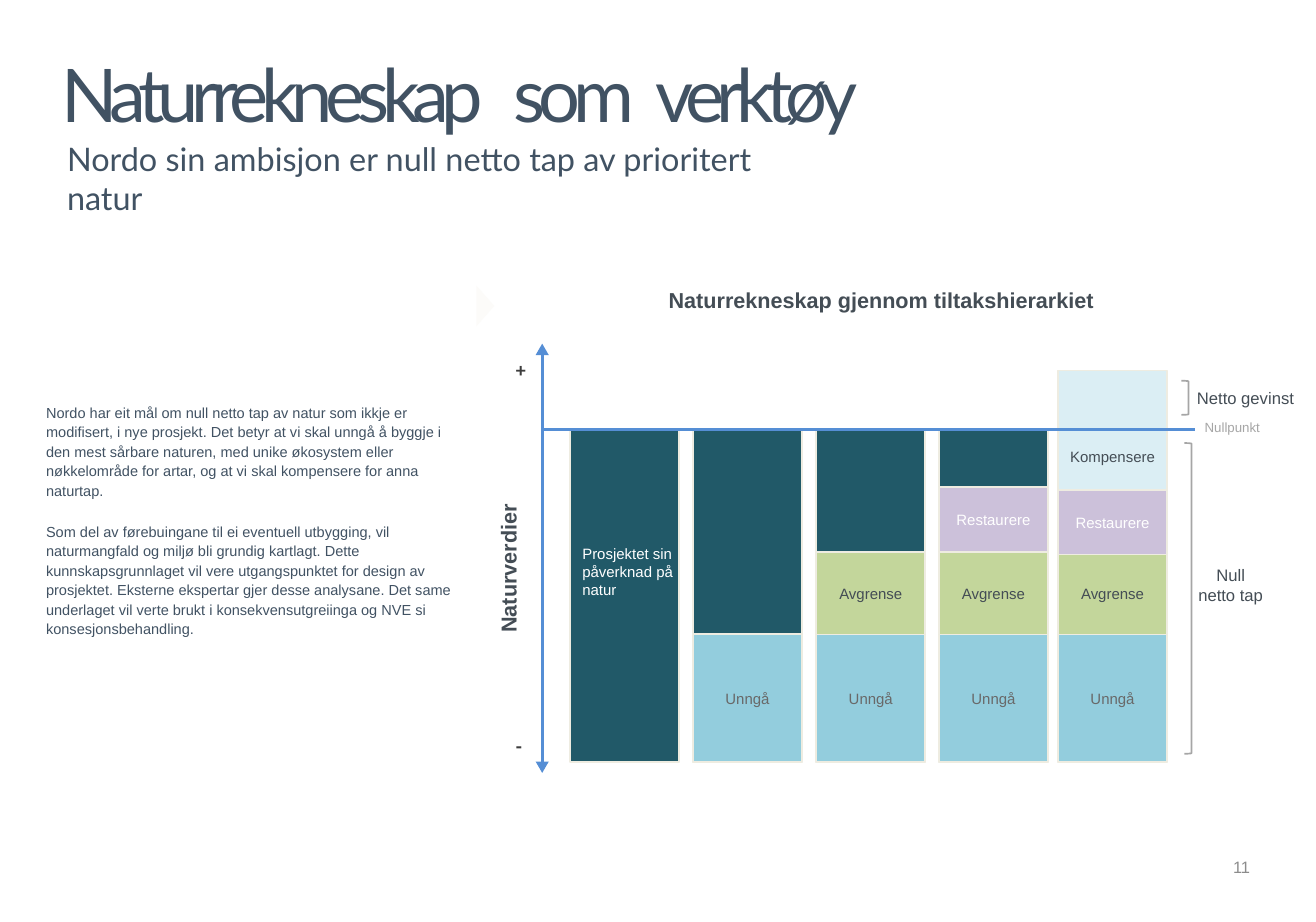
from dataclasses import dataclass

from lxml.etree import SubElement
from pptx import Presentation
from pptx.dml.color import RGBColor
from pptx.enum.shapes import MSO_CONNECTOR, MSO_SHAPE
from pptx.enum.text import MSO_ANCHOR, MSO_AUTO_SIZE, PP_ALIGN
from pptx.oxml.ns import qn
from pptx.util import Inches, Pt


@dataclass(frozen=True)
class Theme:
    slate: str = "415263"
    ink: str = "444D55"
    sign: str = "3D3D3D"
    dim: str = "696969"
    page: str = "8C8C8C"
    grey: str = "A6A6A6"
    white: str = "FFFFFF"
    faint: str = "FCFBF9"
    edge: str = "EEECE1"
    axis: str = "558ED5"
    teal: str = "215968"
    blue: str = "93CDDD"
    green: str = "C3D69B"
    mauve: str = "CCC1DA"
    pale: str = "DBEEF4"
    title: float = 89
    lead: float = 39
    head: float = 26
    mark: float = 24
    note: float = 20
    num: float = 19.8
    label: float = 18
    body: float = 17.5
    small: float = 16


T = Theme()
LEFT, MID, RIGHT = PP_ALIGN.LEFT, PP_ALIGN.CENTER, PP_ALIGN.RIGHT


def write(par, text, size, color, font="Arial", bold=False):
    run = par.add_run()
    run.text = text
    run.font.name, run.font.size, run.font.bold = font, Pt(size), bold
    run.font.color.rgb = RGBColor.from_string(color)
    return run


def draw(kind, box, fill, line=None):
    shape = slide.shapes.add_shape(kind, *map(Inches, box))
    shape.shadow.inherit = False
    shape.fill.solid()
    shape.fill.fore_color.rgb = RGBColor.from_string(fill)
    if line:
        shape.line.color.rgb = RGBColor.from_string(line)
        shape.line.width = Pt(2)
    else:
        shape.line.fill.background()
    return shape


deck = Presentation()
deck.slide_width, deck.slide_height = Inches(21.99), Inches(15.4)
slide = deck.slides.add_slide(deck.slide_layouts[5])

# Title, with tight letters and wider gaps between the words
title = slide.shapes.title
title.left, title.top = Inches(1.03), Inches(0.78)
title.width, title.height = Inches(16.59), Inches(1.53)
frame = title.text_frame
frame.margin_left = frame.margin_right = frame.margin_bottom = 0
frame.margin_top = Inches(0.25)
frame.vertical_anchor = MSO_ANCHOR.TOP
frame.auto_size = MSO_AUTO_SIZE.NONE
frame.word_wrap = True
par = frame.paragraphs[0]
par.alignment, par.line_spacing = LEFT, Pt(90.4)
words = [("Naturrekneskap", -880), (" ", 1380), ("som", -880), (" ", 250), ("verktøy", -880)]
for word, track in words:
    run = write(par, word, T.title, T.slate, "Lato")
    run.font._element.set("spc", str(track))

# Bars: each column takes one more step of the hierarchy
steps = [
    ("Unngå", 10.59, 2.14, T.blue, T.dim),
    ("Avgrense", 9.22, 1.38, T.green, T.ink),
    ("Restaurere", 8.13, 1.08, T.mauve, T.white),
    ("Kompensere", 6.19, 1.99, T.pale, T.ink),
]
lefts = [9.53, 11.58, 13.64, 15.69, 17.68]
wide = 1.82
for count, left in enumerate(lefts):
    full = count == len(steps)
    draw(MSO_SHAPE.RECTANGLE, (left, 7.18, wide, 5.55), T.blue if full else T.teal, T.edge)
    for name, top, high, fill, color in steps[:count]:
        if full and name == "Restaurere":
            top += 0.05
        bar = draw(MSO_SHAPE.RECTANGLE, (left, top, wide, high), fill, T.edge)
        frame = bar.text_frame
        frame.word_wrap = True
        frame.vertical_anchor = MSO_ANCHOR.MIDDLE
        if name == "Kompensere":
            frame.vertical_anchor = MSO_ANCHOR.BOTTOM
            frame.margin_bottom = Inches(0.4)
        frame.paragraphs[0].alignment = MID
        write(frame.paragraphs[0], name, T.label, color)

# Axes
for ends in [(9.07, 5.92, 9.07, 12.73), (9.07, 7.17, 19.97, 7.17)]:
    line = slide.shapes.add_connector(MSO_CONNECTOR.STRAIGHT, *map(Inches, ends))
    line.line.color.rgb = RGBColor.from_string(T.axis)
    line.line.width = Pt(4)
    SubElement(line._element.spPr, qn("a:effectLst"))

tips = [
    ((8.95, 5.74, 0.22, 0.19), 0, T.axis),
    ((8.95, 12.72, 0.22, 0.19), 180, T.axis),
    ((7.77, 4.96, 0.68, 0.3), 90, T.faint),
]
for box, turn, fill in tips:
    draw(MSO_SHAPE.ISOSCELES_TRIANGLE, box, fill).rotation = turn

for box in [(19.79, 7.4, 0.12, 5.19), (19.74, 6.36, 0.12, 0.57)]:
    draw(MSO_SHAPE.RIGHT_BRACKET, box, T.white, T.grey)

# Text: box, size, colour, alignment, font, bold, paragraphs
texts = [
    ((1.12, 2.33, 12.3, 1.35), T.lead, T.slate, LEFT, "Lato", False,
     ["Nordo sin ambisjon er null netto tap av prioritert natur"]),
    ((0.77, 6.71, 6.97, 3.97), T.body, T.slate, LEFT, "Arial", False,
     ["Nordo har eit mål om null netto tap av natur som ikkje er modifisert, i nye prosjekt. "
      "Det betyr at vi skal unngå å byggje i den mest sårbare naturen, med unike økosystem "
      "eller nøkkelområde for artar, og at vi skal kompensere for anna naturtap.",
      "Som del av førebuingane til ei eventuell utbygging, vil naturmangfald og miljø bli "
      "grundig kartlagt. Dette kunnskapsgrunnlaget vil vere utgangspunktet for design av "
      "prosjektet. Eksterne ekspertar gjer desse analysane. Det same underlaget vil verte "
      "brukt i konsekvensutgreiinga og NVE si konsesjonsbehandling."]),
    ((8.58, 4.8, 12.3, 0.42), T.head, T.ink, MID, "Arial", True,
     ["Naturrekneskap gjennom tiltakshierarkiet"]),
    ((8.27, 8.2, 0.7, 2.37), T.head, T.ink, LEFT, "Arial", True, ["Naturverdier"]),
    ((8.62, 5.98, 0.3, 0.4), T.mark, T.sign, LEFT, "Calibri", True, ["+"]),
    ((8.62, 12.25, 0.3, 0.4), T.mark, T.sign, LEFT, "Calibri", True, ["-"]),
    ((9.73, 9.1, 1.62, 1.48), T.label, T.white, LEFT, "Arial", False,
     ["Prosjektet sin påverknad på natur"]),
    ((20, 6.47, 1.77, 0.38), T.note, T.ink, LEFT, "Arial", False, ["Netto gevinst"]),
    ((20.13, 7, 1.49, 0.34), T.small, T.grey, LEFT, "Arial", False, ["Nullpunkt"]),
    ((20, 9.44, 1.13, 0.95), T.note, T.ink, MID, "Arial", False, ["Null netto tap"]),
    ((15.83, 14.32, 5.06, 0.77), T.num, T.page, RIGHT, "Arial", False, ["11"]),
]
for box, size, color, align, font, bold, lines in texts:
    frame = slide.shapes.add_textbox(*map(Inches, box)).text_frame
    frame.word_wrap = True
    frame.margin_left = frame.margin_right = frame.margin_top = frame.margin_bottom = 0
    for row, text in enumerate(lines):
        par = frame.add_paragraph() if row else frame.paragraphs[0]
        par.alignment = align
        if row:
            par.space_before = Pt(25.5)
        if size == T.body:
            par.line_spacing = 1.12
        write(par, text, size, color, font, bold)
    if lines == ["Naturverdier"]:
        frame._txBody.bodyPr.set("vert", "vert270")

deck.save("out.pptx")
